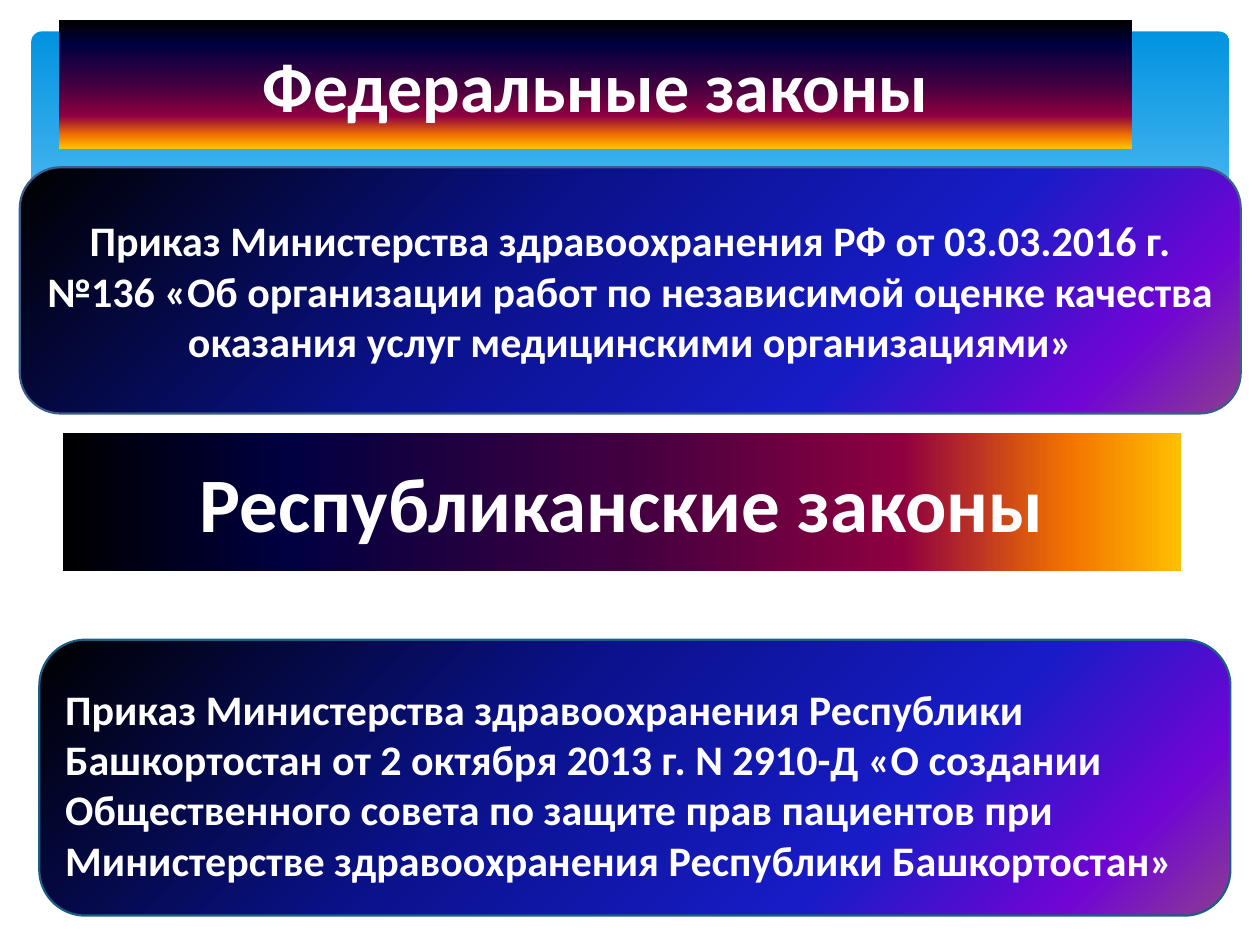
from lxml import etree
from pptx import Presentation
from pptx.dml import color
from pptx.enum import shapes, text
from pptx.oxml import ns
from pptx.util import Pt

COLORS = {
    "white": "FFFFFF",
    "federal_line": "385D8A",
    "republic_line": "195F84",
}
GRADIENTS = {
    "sky": [(0, "0293E0"), (90, "83D3FE")],
    "sunset": [(0, "000000"), (20, "000040"), (50, "400040"),
               (75, "8F0040"), (90, "F27300"), (100, "FFBF00")],
    "night": [(0, "000000"), (40, "0A128C"), (70, "181CC7"),
              (88, "7005D4"), (100, "8C3D91")],
}
FONT = "Calibri"


def fill_gradient(shape, name, angle):
    shape.fill.gradient()
    shape.fill.gradient_angle = (360 - angle) % 360
    stops = shape.element.spPr.find(".//" + ns.qn("a:gsLst"))
    for stop in list(stops):
        stops.remove(stop)
    for position, value in GRADIENTS[name]:
        stop = etree.SubElement(stops, ns.qn("a:gs"), pos=str(position * 1000))
        etree.SubElement(stop, ns.qn("a:srgbClr"), val=value)


def write_text(shape, wording, size, alignment):
    frame = shape.text_frame
    frame.text = wording
    frame.word_wrap = True
    frame.auto_size = text.MSO_AUTO_SIZE.NONE
    frame.vertical_anchor = text.MSO_ANCHOR.MIDDLE
    paragraph = frame.paragraphs[0]
    paragraph.alignment = alignment
    font = paragraph.runs[0].font
    font.name, font.size, font.bold = FONT, Pt(size), True
    font.color.rgb = color.RGBColor.from_string(COLORS["white"])


def add_box(slide, kind, box):
    shape = slide.shapes.add_shape(kind, *map(Pt, box))
    shape.shadow.inherit = False
    shape.line.fill.background()
    return shape


def add_backdrop(slide, box):
    panel = add_box(slide, shapes.MSO_SHAPE.ROUNDED_RECTANGLE, box)
    panel.adjustments[0] = 0.03
    fill_gradient(panel, "sky", 90)


def format_heading(shape, wording, size, angle):
    fill_gradient(shape, "sunset", angle)
    write_text(shape, wording, size, text.PP_ALIGN.CENTER)


def add_heading(slide, box, wording):
    banner = add_box(slide, shapes.MSO_SHAPE.RECTANGLE, box)
    format_heading(banner, wording, 40, 90)


def place_title(slide, box, wording):
    title = slide.shapes.title
    title.left, title.top, title.width, title.height = map(Pt, box)
    format_heading(title, wording, 44, 0)


def add_order_card(slide, box, wording, line, alignment, top_inset=3.6):
    card = add_box(slide, shapes.MSO_SHAPE.ROUNDED_RECTANGLE, box)
    fill_gradient(card, "night", 45)
    card.line.color.rgb = color.RGBColor.from_string(COLORS[line])
    card.line.width = Pt(1.25)
    write_text(card, wording, 24, alignment)
    card.text_frame.margin_top = Pt(top_inset)


def main():
    presentation = Presentation()
    presentation.slide_width, presentation.slide_height = Pt(720), Pt(540)
    slide = presentation.slides.add_slide(presentation.slide_layouts[5])

    add_backdrop(slide, (18, 18, 684.5, 194.5))
    add_order_card(
        slide, (11.3, 95.6, 697.7, 140.7),
        "Приказ Министерства здравоохранения РФ от 03.03.2016 г. №136 "
        "«Об организации работ по независимой оценке качества оказания "
        "услуг медицинскими организациями»",
        "federal_line", text.PP_ALIGN.CENTER)
    add_order_card(
        slide, (22.5, 365.6, 680.6, 157.6),
        "Приказ Министерства здравоохранения Республики Башкортостан "
        "от 2 октября 2013 г. N 2910-Д «О создании Общественного совета "
        "по защите прав пациентов при Министерстве здравоохранения "
        "Республики Башкортостан»",
        "republic_line", text.PP_ALIGN.LEFT, top_inset=10.6)
    place_title(slide, (36, 247.5, 639, 78.8), "Республиканские законы")
    add_heading(slide, (33.8, 11.3, 613.2, 73.4), "Федеральные законы")

    presentation.save("out.pptx")


if __name__ == "__main__":
    main()
